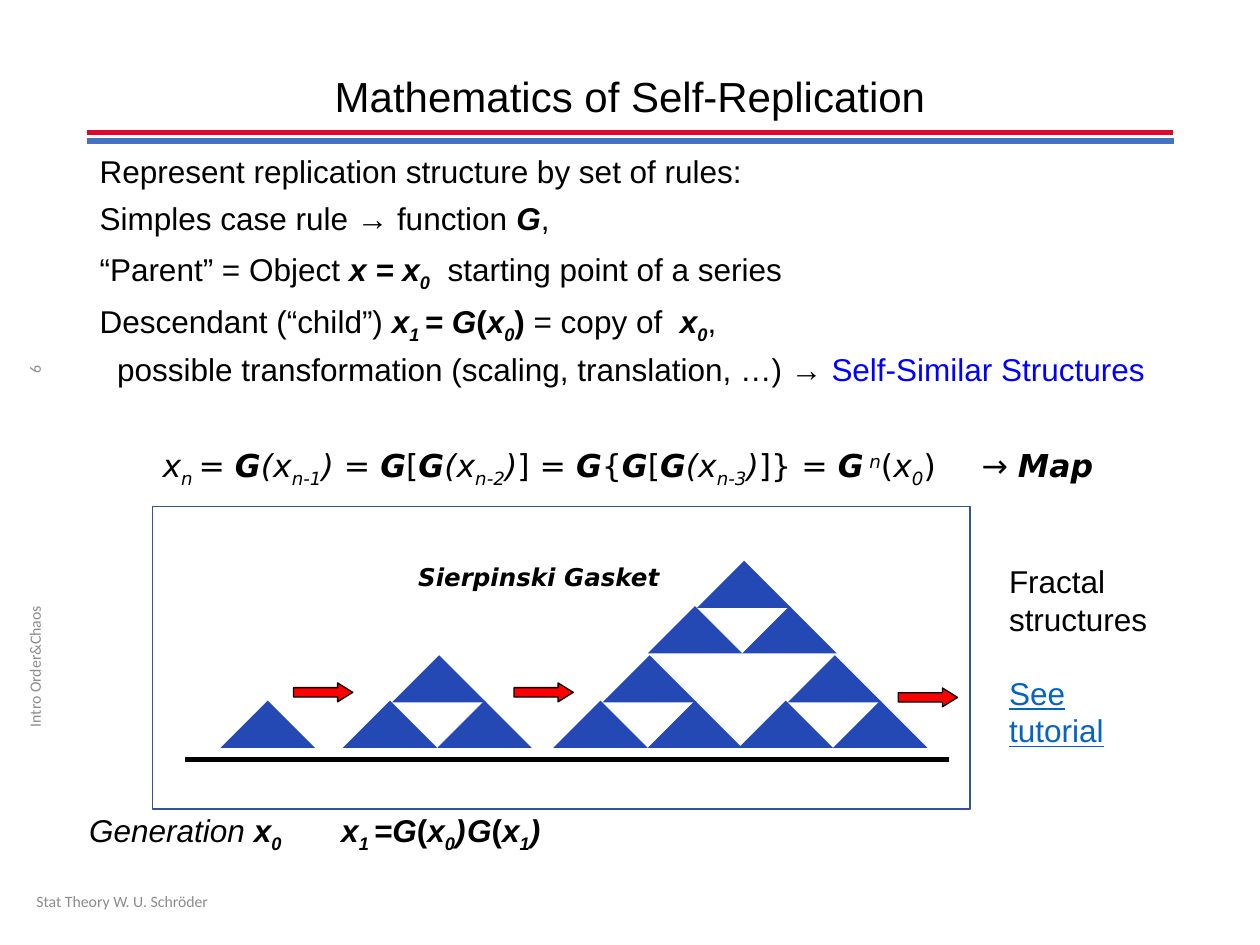
from typing import NamedTuple

from lxml.etree import SubElement
from pptx import Presentation
from pptx.dml.color import RGBColor
from pptx.enum.shapes import MSO_CONNECTOR, MSO_SHAPE
from pptx.enum.text import MSO_ANCHOR as Anchor, MSO_AUTO_SIZE, PP_ALIGN as Align
from pptx.oxml.ns import qn
from pptx.util import Inches, Pt

COLORS = {
    "text": "000000", "white": "FFFFFF", "footer": "8C8C8C", "accent": "0000FF",
    "link": "0563C1", "rule_red": "DD092C", "rule_blue": "4472C4",
    "frame": "325491", "triangle": "2448B4", "arrow": "FF0000",
}
SLIDE_WIDTH, SLIDE_HEIGHT = Inches(10), Inches(7.5)
UNIT = SLIDE_WIDTH // 100  # the slide is a grid of 100 columns by 75 rows
MATH = "DejaVu Sans"


class Area(NamedTuple):
    """A place on the slide grid, in columns and rows."""
    col: float
    row: float
    cols: float
    rows: float

    def lengths(self) -> list[int]:
        return [round(value * UNIT) for value in self]


class Span(NamedTuple):
    """Text with marks: b bold, i italic, u underlined, _ subscript, ^ superscript."""
    text: str
    marks: str = ""
    color: str = "text"


class Line(NamedTuple):
    spans: list[Span]
    font: str = "Arial"
    size: float = 18
    align: Align = Align.LEFT
    before: float = 0
    spacing: float = 1
    indent: float = 0
    tabs: tuple[float, ...] = ()


class Rule(NamedTuple):
    start: float
    end: float
    row: float
    color: str


def rgb(name: str) -> RGBColor:
    return RGBColor.from_string(COLORS[name])


def write(frame, lines: list[Line], anchor=Anchor.TOP) -> None:
    frame.word_wrap = True
    frame.auto_size = MSO_AUTO_SIZE.NONE
    frame.vertical_anchor = anchor
    for index, line in enumerate(lines):
        para = frame.add_paragraph() if index else frame.paragraphs[0]
        para.alignment, para.line_spacing = line.align, line.spacing
        para.space_before = Pt(line.before)
        props = para._p.get_or_add_pPr()
        props.set("marL", str(round(line.indent * UNIT)))
        props.set("indent", "0")
        SubElement(props, qn("a:buNone"))
        if line.tabs:
            stops = SubElement(props, qn("a:tabLst"))
            for stop in line.tabs:
                SubElement(stops, qn("a:tab"), pos=str(round(stop * UNIT)), algn="l")
        for span in line.spans:
            run = para.add_run()
            run.text = span.text
            font = run.font
            font.name, font.size = line.font, Pt(line.size)
            font.bold, font.italic = "b" in span.marks, "i" in span.marks
            font.underline = "u" in span.marks
            font.color.rgb = rgb(span.color)
            for mark, shift in (("_", "-25000"), ("^", "30000")):
                if mark in span.marks:
                    font._element.set("baseline", shift)


def add_text(slide, area: Area, lines: list[Line], anchor=Anchor.TOP, turn: float = 0) -> None:
    box = slide.shapes.add_textbox(*area.lengths())
    box.rotation = turn
    write(box.text_frame, lines, anchor)


def fill_placeholder(holder, area: Area, lines: list[Line], anchor=Anchor.TOP) -> None:
    holder.left, holder.top, holder.width, holder.height = area.lengths()
    write(holder.text_frame, lines, anchor)


def add_rule(slide, rule: Rule) -> None:
    start, end, row = (round(value * UNIT) for value in rule[:3])
    line = slide.shapes.add_connector(MSO_CONNECTOR.STRAIGHT, start, row, end, row)
    line.line.width, line.line.color.rgb = Pt(3), rgb(rule.color)
    SubElement(line._element.spPr, qn("a:effectLst"))


def add_figure(slide, kind, area: Area, fill: str, outline: str = "", width: float = 1):
    shape = slide.shapes.add_shape(kind, *area.lengths())
    shape.shadow.inherit = False
    shape.fill.solid()
    shape.fill.fore_color.rgb = rgb(fill)
    if outline:
        shape.line.color.rgb, shape.line.width = rgb(outline), Pt(width)
    else:
        shape.line.fill.background()
    return shape


BODY = [
    [Span("Represent replication structure by set of rules:")],
    [Span("Simples case rule → function "), Span("G", "bi"), Span(",")],
    [Span("“Parent” = Object "), Span("x = x", "bi"), Span("0", "bi_"),
     Span("  starting point of a series")],
    [Span("Descendant (“child”) "), Span("x", "bi"), Span("1 ", "bi_"), Span("= G", "bi"),
     Span("(", "b"), Span("x", "bi"), Span("0", "bi_"), Span(")", "b"), Span(" = copy of "),
     Span(" x", "bi"), Span("0", "bi_"), Span(",")],
]
TRANSFORMATION = [Span("possible transformation (scaling, translation, …) → "),
                  Span("Self-Similar Structures", color="accent")]
G = Span("G", "bi")
MAP = [
    Span("\tx", "i"), Span("n ", "i_"), Span("= ", "i"),
    G, Span("(x", "i"), Span("n-1", "i_"), Span(") = ", "i"),
    G, Span("["), G, Span("(x", "i"), Span("n-2", "i_"), Span(")", "i"), Span("] = "),
    G, Span("{"), G, Span("["), G, Span("(x", "i"), Span("n-3", "i_"), Span(")", "i"),
    Span("]} "), Span("= ", "i"), G, Span(" n", "i^"), Span("("), Span("x", "i"),
    Span("0", "i_"), Span(")\t→ "), Span("Map", "bi"),
]
GENERATIONS = [
    Span("Generation ", "i"), Span("x", "bi"), Span("0", "bi_"),
    Span("\tx", "bi"), Span("1 ", "bi_"), Span("=G", "bi"), Span("(", "b"), Span("x", "bi"),
    Span("0", "bi_"), Span(")", "bi"),
    Span("\tG", "bi"), Span("(", "b"), Span("x", "bi"), Span("1", "bi_"), Span(")", "bi"),
]


def add_gasket(slide) -> None:
    """Draw three generations; each puts three copies of the one before."""
    child = [(0, 0), (3.9, -3.6), (7.5, 0)]
    corners = [(0, 0), (7.5, -7.5), (14.7, 0)]
    grandchild = [(x + dx, y + dy) for x, y in corners for dx, dy in child]
    for start, offsets in ((18.6, [(0, 0)]), (28.3, child), (45, grandchild)):
        for dx, dy in offsets:
            area = Area(start + dx, 56.7 + dy, 5.3, 5.3)
            add_figure(slide, MSO_SHAPE.RIGHT_TRIANGLE, area, "triangle").rotation = 135
    for col, row in ((23.3, 54.2), (40.8, 54.2), (71.3, 54.6)):
        arrow = add_figure(slide, MSO_SHAPE.RIGHT_ARROW, Area(col, row, 4.7, 1.5),
                           "arrow", "text", 0.75)
        arrow.adjustments[0], arrow.adjustments[1] = 0.5, 0.8


def main() -> None:
    deck = Presentation()
    deck.slide_width, deck.slide_height = SLIDE_WIDTH, SLIDE_HEIGHT
    slide = deck.slides.add_slide(deck.slide_layouts[1])

    add_rule(slide, Rule(6.9, 93.1, 10.5, "rule_red"))
    add_rule(slide, Rule(6.9, 93.2, 11.2, "rule_blue"))
    title = Line([Span("Mathematics of Self-Replication")], size=24,
                 align=Align.CENTER, spacing=0.9)
    fill_placeholder(slide.shapes.title, Area(6.9, 4.6, 86.2, 6.5), [title], Anchor.MIDDLE)
    body = [Line(spans, before=7.5, spacing=0.9) for spans in BODY]
    body.append(Line(TRANSFORMATION, before=7.5, spacing=0.9, indent=1.4))
    body.append(Line(MAP, MATH, before=33.6, spacing=0.9, tabs=(2.4, 66.5)))
    fill_placeholder(slide.placeholders[1], Area(6.9, 11.9, 86.2, 27), body)

    for text, area, align, turn in (
        ("Stat Theory W. U. Schröder", Area(1.9, 69.5, 22.5, 4), Align.LEFT, 0),
        ("Intro Order&Chaos", Area(-9.7, 50.9, 24.9, 4), Align.CENTER, 270),
        ("6", Area(-0.5, 29.3, 6.5, 4), Align.RIGHT, 270),
    ):
        footer = Line([Span(text, color="footer")], "Calibri", 9, align)
        add_text(slide, area, [footer], Anchor.MIDDLE, turn)

    add_figure(slide, MSO_SHAPE.RECTANGLE, Area(12.1, 40.2, 64.9, 24), "white", "frame")
    add_rule(slide, Rule(14.7, 75.3, 60.3, "text"))
    add_gasket(slide)
    label = add_figure(slide, MSO_SHAPE.RECTANGLE, Area(32.2, 44.1, 21.9, 3.1), "white")
    write(label.text_frame, [Line([Span("Sierpinski Gasket", "bi")], MATH, 14)])
    add_text(slide, Area(6.1, 63.9, 71.8, 4), [Line(GENERATIONS, tabs=(22.7, 48.5))])
    add_text(slide, Area(79.1, 44.1, 14.2, 16.2), [
        Line([Span("Fractal structures")]),
        Line([Span("See tutorial", "u", "link")], before=20.7),
    ])
    deck.save("out.pptx")


if __name__ == "__main__":
    main()
